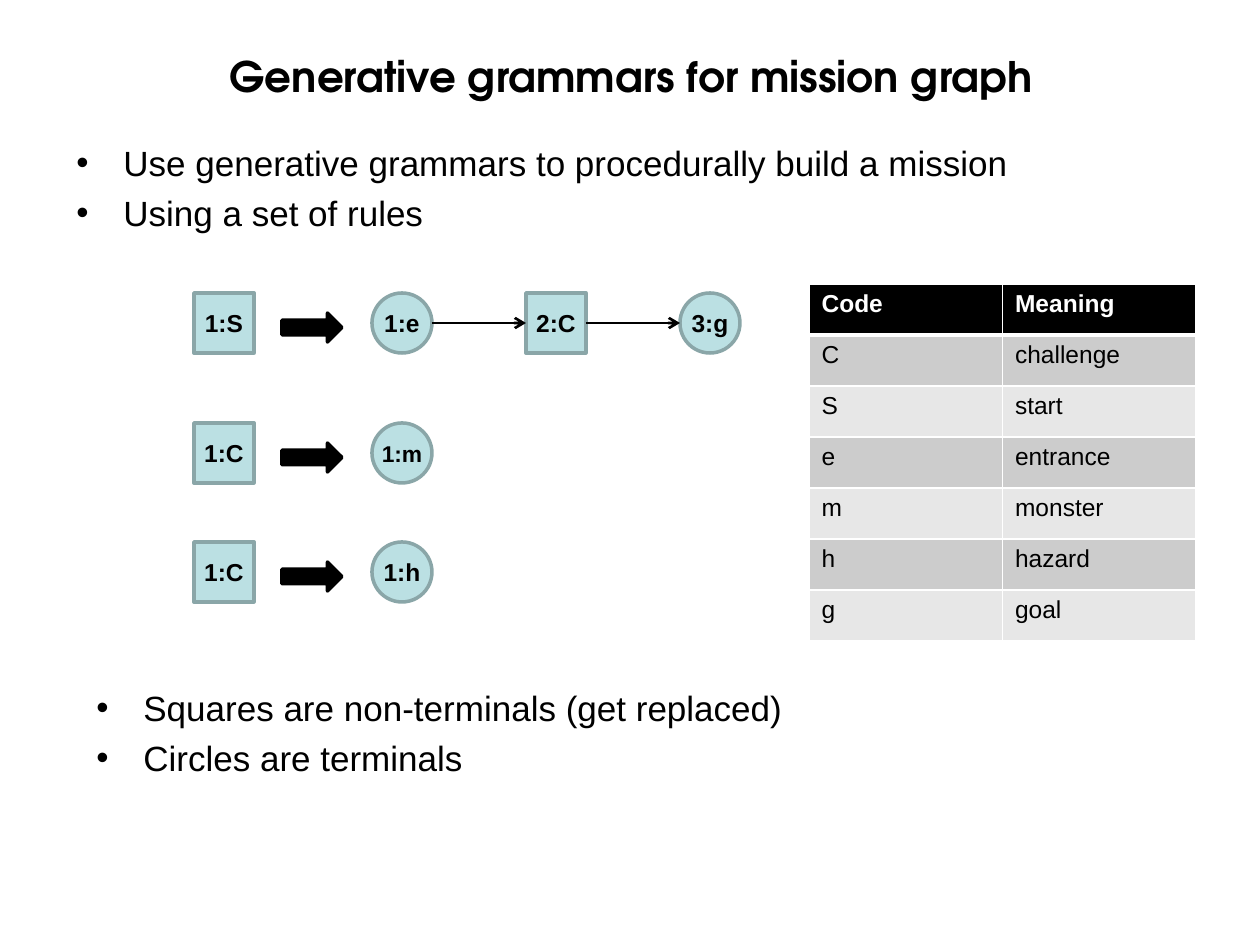
import pptx
import pptx.util
import pptx.dml.color
import pptx.enum.shapes
import pptx.enum.text
import pptx.oxml
import pptx.oxml.ns

SHAPE = pptx.enum.shapes.MSO_SHAPE
ALIGN = pptx.enum.text.PP_ALIGN
ANCHOR = pptx.enum.text.MSO_ANCHOR
Pt = pptx.util.Pt
INK, WHITE = "000000", "FFFFFF"


def px(n):
    return pptx.util.Emu(round(n * 914400 / 126))


def tint(code):
    return pptx.dml.color.RGBColor.from_string(code)


def node(tag, inner="", **attrs):
    """Make a DrawingML element from its tag, inner XML and attributes."""
    pairs = "".join(f' {key}="{val}"' for key, val in attrs.items())
    space = pptx.oxml.ns.nsdecls("a")
    return pptx.oxml.parse_xml(f"<a:{tag} {space}{pairs}>{inner}</a:{tag}>")


class Page:
    font = "Arial"
    fill, edge = "BBE0E3", "8AA6A8"
    bands = ("CCCCCC", "E7E7E7")

    def __init__(self, slide):
        self.slide = slide
        self.shapes = slide.shapes

    def run(self, para, text, size, color=INK, bold=False, font=None):
        run = para.add_run()
        run.text = text
        run.font.name = font or self.font
        run.font.size = Pt(size)
        run.font.bold = bold
        run.font.color.rgb = tint(color)

    def box(self, x, y, w, h):
        frame = self.shapes.add_textbox(px(x), px(y), px(w), px(h)).text_frame
        frame.word_wrap = True
        return frame

    def title(self, text, x, y, w, h):
        frame = self.box(x, y, w, h)
        frame.vertical_anchor = ANCHOR.MIDDLE
        para = frame.paragraphs[0]
        para.alignment = ALIGN.CENTER
        self.run(para, text, 24, bold=True, font="TeX Gyre Adventor")

    def bullets(self, lines, x, y, w, h):
        frame = self.box(x, y, w, h)
        for i, line in enumerate(lines):
            para = frame.add_paragraph() if i else frame.paragraphs[0]
            para.space_before = Pt(5)
            props = para._p.get_or_add_pPr()
            props.set("marL", str(px(47)))
            props.set("indent", str(-px(47)))
            props.append(node("buFont", typeface=self.font))
            props.append(node("buChar", char="•"))
            self.run(para, line, 20)

    def shape(self, kind, x, y, w, h, fill, edge):
        shape = self.shapes.add_shape(kind, px(x), px(y), px(w), px(h))
        shape.shadow.inherit = False
        shape.fill.solid()
        shape.fill.fore_color.rgb = tint(fill)
        shape.line.color.rgb = tint(edge)
        shape.line.width = Pt(2)
        return shape

    def symbol(self, kind, text, x, y, side, size=14):
        """Draw a grammar symbol: a square or a circle with a label."""
        shape = self.shape(kind, x, y, side, side, self.fill, self.edge)
        frame = shape.text_frame
        frame.margin_left = frame.margin_right = 0
        frame.margin_top = frame.margin_bottom = 0
        frame.vertical_anchor = ANCHOR.MIDDLE
        frame.word_wrap = False
        para = frame.paragraphs[0]
        para.alignment = ALIGN.CENTER
        self.run(para, text, size, bold=True)

    def link(self, x, y, end):
        line = self.shapes.add_connector(
            pptx.enum.shapes.MSO_CONNECTOR.STRAIGHT, px(x), px(y), px(end), px(y))
        line.line.color.rgb = tint(INK)
        line.line.width = Pt(1.5)
        line.line._get_or_add_ln().append(node("tailEnd", type="arrow"))
        line._element.spPr.append(node("effectLst"))

    def cell(self, cell, text, fill, head):
        self.run(cell.text_frame.paragraphs[0], text, 14,
                 WHITE if head else INK, head)
        props = cell._tc.get_or_add_tcPr()
        paint = f'<a:solidFill><a:srgbClr val="{WHITE}"/></a:solidFill>'
        for side in ("lnL", "lnR", "lnT", "lnB"):
            wide = 3 if head and side == "lnB" else 1
            props.append(node(side, paint, w=Pt(wide)))
        cell.fill.solid()
        cell.fill.fore_color.rgb = tint(fill)

    def table(self, rows, x, y, w, step):
        table = self.shapes.add_table(len(rows), len(rows[0]), px(x), px(y),
                                      px(w), px(step * len(rows))).table
        for r, row in enumerate(rows):
            fill = self.bands[(r - 1) % 2] if r else INK
            for c, text in enumerate(row):
                self.cell(table.cell(r, c), text, fill, r == 0)


def main():
    deck = pptx.Presentation()
    deck.slide_width, deck.slide_height = px(1260), px(945)
    page = Page(deck.slides.add_slide(deck.slide_layouts[6]))

    page.title("Generative grammars for mission graph", 64, 37, 1134, 77)
    page.bullets(["Use generative grammars to procedurally build a mission",
                  "Using a set of rules"], 64, 135, 1134, 118)

    side, first, step = 60, 372, 154
    rules = [(293, "1:S", ["1:e", "2:C", "3:g"]),
             (423, "1:C", ["1:m"]),
             (542, "1:C", ["1:h"])]
    for y, left, right in rules:
        page.symbol(SHAPE.RECTANGLE, left, 194, y, side)
        page.shape(SHAPE.RIGHT_ARROW, 282, y + 20, side, 29, INK, INK)
        for i, name in enumerate(right):
            x = first + i * step
            kind = SHAPE.RECTANGLE if name.endswith("C") else SHAPE.OVAL
            page.symbol(kind, name, x, y, side, 13 if name == "1:m" else 14)
            if i:
                page.link(x - step + side, y + side // 2, x)

    page.table([("Code", "Meaning"), ("C", "challenge"), ("S", "start"),
                ("e", "entrance"), ("m", "monster"), ("h", "hazard"),
                ("g", "goal")], 809, 284, 387, 51)
    page.bullets(["Squares are non-terminals (get replaced)",
                  "Circles are terminals"], 84, 680, 1134, 118)
    deck.save("out.pptx")


if __name__ == "__main__":
    main()
